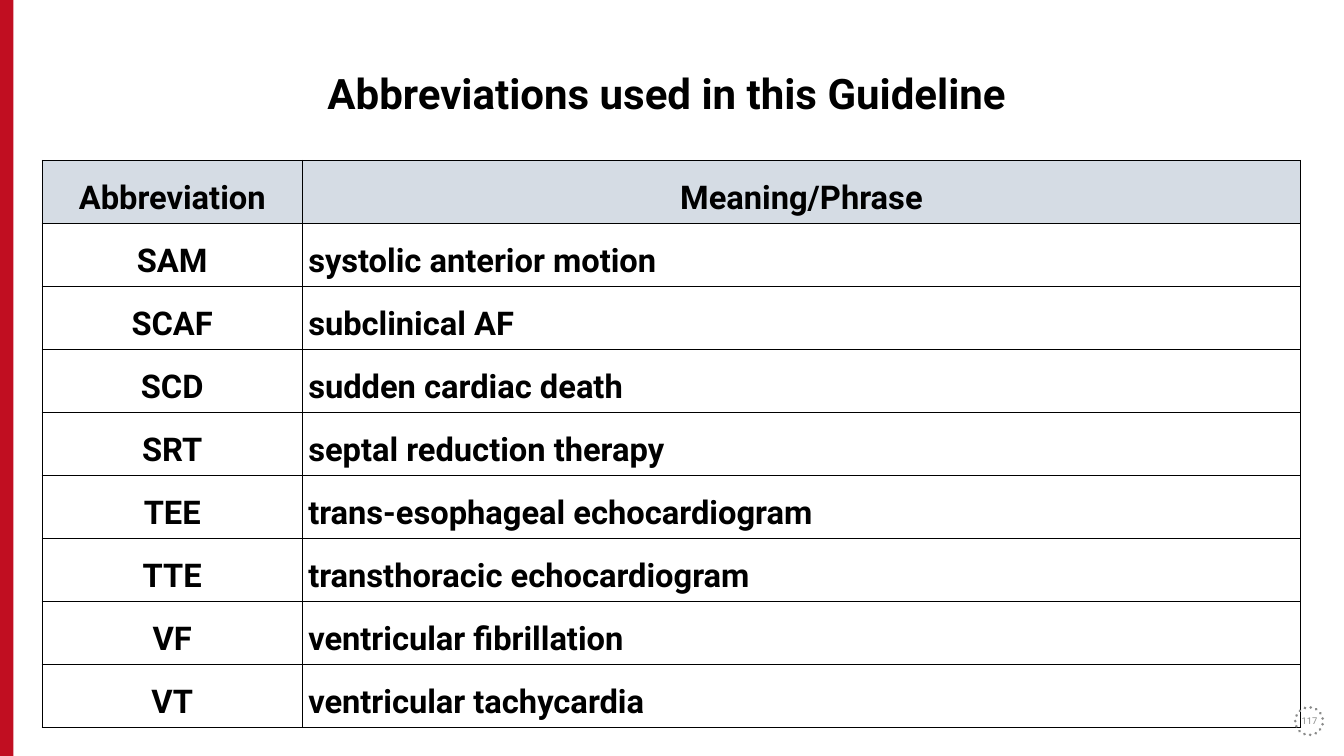
from dataclasses import dataclass

import pptx
import pptx.dml.color
import pptx.enum.dml
import pptx.enum.shapes
import pptx.enum.text
import pptx.oxml
import pptx.oxml.ns
import pptx.util

Inches = pptx.util.Inches
Pt = pptx.util.Pt
Align = pptx.enum.text.PP_ALIGN
Anchor = pptx.enum.text.MSO_ANCHOR
Shape = pptx.enum.shapes.MSO_SHAPE


@dataclass(frozen=True)
class Theme:
    font: str = "Roboto"
    ink: str = "000000"
    accent: str = "C10E21"
    muted: str = "8A8B8A"
    header: str = "D5DCE4"
    title_size: int = 36
    table_size: int = 28
    number_size: int = 8


ABBREVIATIONS = [
    ("Abbreviation", "Meaning/Phrase"),
    ("SAM", "systolic anterior motion"),
    ("SCAF", "subclinical AF"),
    ("SCD", "sudden cardiac death"),
    ("SRT", "septal reduction therapy"),
    ("TEE", "trans-esophageal echocardiogram"),
    ("TTE", "transthoracic echocardiogram"),
    ("VF", "ventricular fibrillation"),
    ("VT", "ventricular tachycardia"),
]


def rgb(value):
    return pptx.dml.color.RGBColor.from_string(value)


def write_text(text_frame, text, *, font, size, color, bold=False,
               align=Align.CENTER, line_spacing=1.0):
    paragraph = text_frame.paragraphs[0]
    paragraph.alignment = align
    paragraph.line_spacing = line_spacing
    run = paragraph.add_run()
    run.text = text
    run.font.name = font
    run.font.size = Pt(size)
    run.font.bold = bold
    run.font.color.rgb = rgb(color)


def set_borders(cell, color, width):
    properties = cell._tc.get_or_add_tcPr()
    for index, side in enumerate("LRTB"):
        border = pptx.oxml.parse_xml(
            f'<a:ln{side} {pptx.oxml.ns.nsdecls("a")} w="{Pt(width)}">'
            f'<a:solidFill><a:srgbClr val="{color}"/></a:solidFill></a:ln{side}>')
        properties.insert(index, border)


class SlideBuilder:
    def __init__(self, presentation, theme):
        self.theme = theme
        self.slide = presentation.slides.add_slide(presentation.slide_layouts[5])

    def title(self, text, left, top, width, height):
        title = self.slide.shapes.title
        title.left, title.top = Inches(left), Inches(top)
        title.width, title.height = Inches(width), Inches(height)
        title.text_frame.word_wrap = True
        title.text_frame.auto_size = pptx.enum.text.MSO_AUTO_SIZE.NONE
        title.text_frame.vertical_anchor = Anchor.TOP
        write_text(title.text_frame, text, font=self.theme.font,
                   size=self.theme.title_size, color=self.theme.ink, bold=True)

    def shape(self, kind, left, top, width, height):
        shape = self.slide.shapes.add_shape(
            kind, Inches(left), Inches(top), Inches(width), Inches(height))
        shape.shadow.inherit = False
        return shape

    def side_bar(self, width, height):
        bar = self.shape(Shape.RECTANGLE, 0, 0, width, height)
        bar.fill.solid()
        bar.fill.fore_color.rgb = rgb(self.theme.accent)
        bar.line.fill.background()

    def dotted_ring(self, left, top, diameter):
        ring = self.shape(Shape.OVAL, left, top, diameter, diameter)
        ring.fill.background()
        ring.line.color.rgb = rgb(self.theme.muted)
        ring.line.width = Pt(2.5)
        ring.line.dash_style = pptx.enum.dml.MSO_LINE.ROUND_DOT
        ring.element.spPr.find(pptx.oxml.ns.qn("a:ln")).set("cap", "rnd")

    def page_number(self, text, left, top, size):
        box = self.slide.shapes.add_textbox(
            Inches(left), Inches(top), Inches(size), Inches(size))
        box.text_frame.word_wrap = True
        box.text_frame.vertical_anchor = Anchor.MIDDLE
        write_text(box.text_frame, text, font=self.theme.font,
                   size=self.theme.number_size, color=self.theme.muted)

    def table(self, rows, left, top, column_widths, row_height):
        table = self.slide.shapes.add_table(
            len(rows), len(column_widths), Inches(left), Inches(top),
            Inches(sum(column_widths)), Inches(row_height * len(rows))).table
        table.horz_banding = False
        for column, width in zip(table.columns, column_widths):
            column.width = Inches(width)
        for row_index, texts in enumerate(rows):
            table.rows[row_index].height = Inches(row_height)
            for column_index, text in enumerate(texts):
                self.table_cell(table.cell(row_index, column_index), text,
                                is_header=row_index == 0,
                                centred=row_index == 0 or column_index == 0)

    def table_cell(self, cell, text, is_header, centred):
        cell.margin_left = cell.margin_right = Inches(0.07)
        cell.margin_top = cell.margin_bottom = 0
        if is_header:
            cell.fill.solid()
            cell.fill.fore_color.rgb = rgb(self.theme.header)
        else:
            cell.fill.background()
        set_borders(cell, self.theme.ink, 1)
        write_text(cell.text_frame, text, font=self.theme.font,
                   size=self.theme.table_size, color=self.theme.ink, bold=True,
                   align=Align.CENTER if centred else Align.LEFT,
                   line_spacing=1.5)


def main():
    presentation = pptx.Presentation()
    presentation.slide_width = Inches(16)
    presentation.slide_height = Inches(9)
    builder = SlideBuilder(presentation, Theme())
    builder.side_bar(0.16, 9)
    builder.title("Abbreviations used in this Guideline ", 3.46, 0.75, 9.08, 0.71)
    builder.table(ABBREVIATIONS, 0.5, 1.91, (3.1, 11.88), 0.75)
    builder.dotted_ring(15.42, 8.42, 0.33)
    builder.page_number("117", 15.35, 8.34, 0.48)
    presentation.save("out.pptx")


if __name__ == "__main__":
    main()
